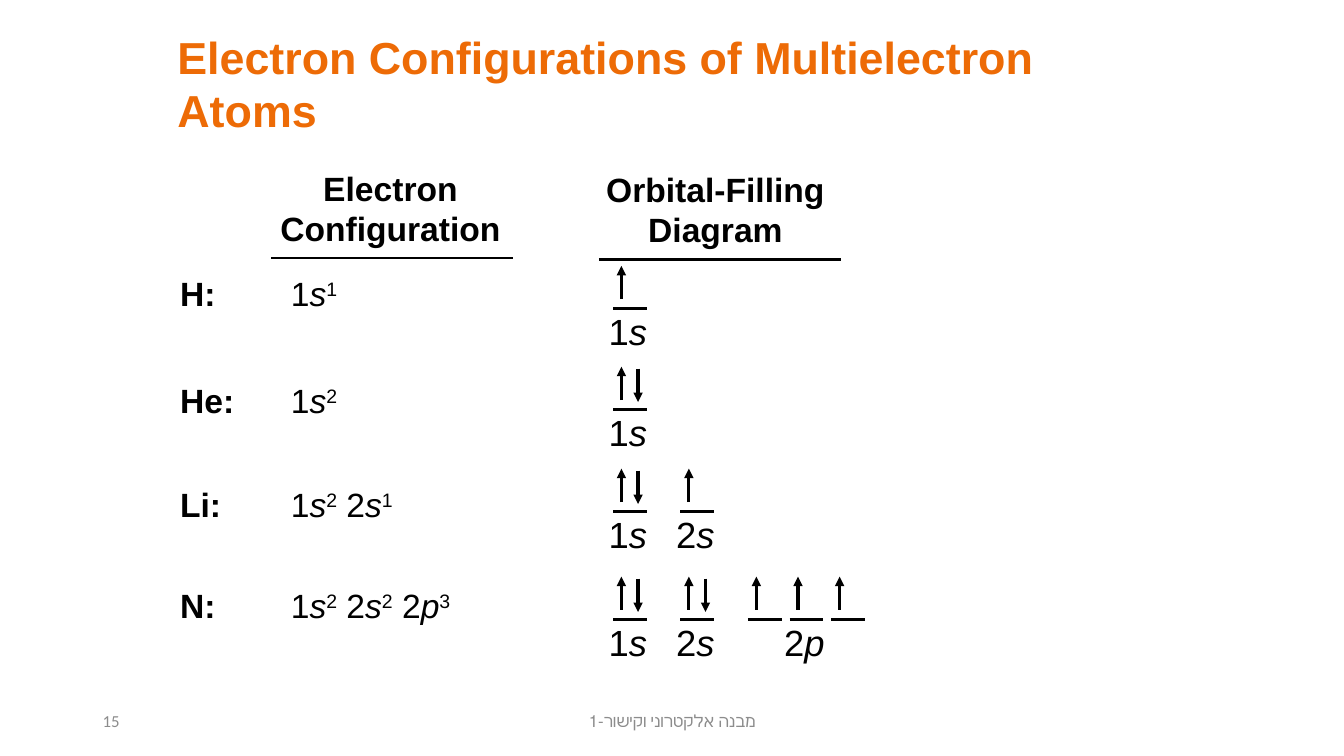
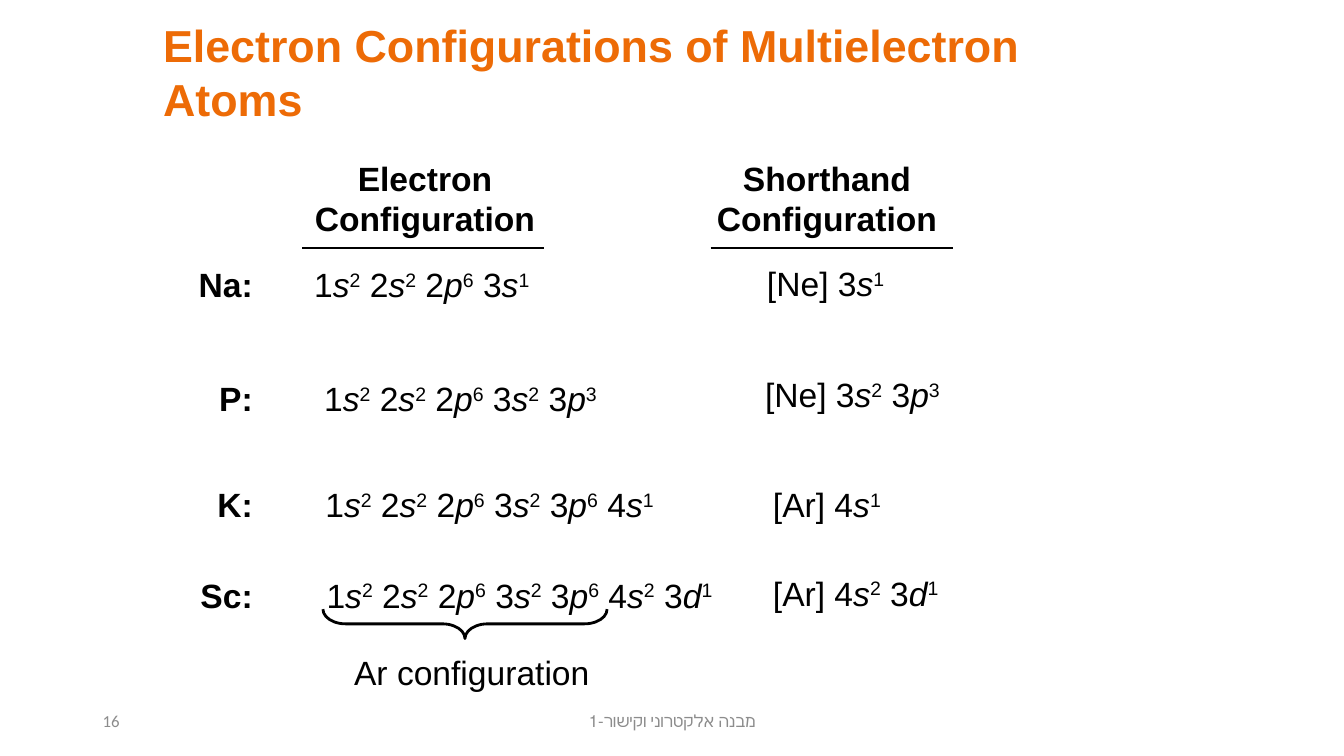
"""Builds two slides on the electron configurations of atoms."""
from itertools import groupby

from lxml import etree
from pptx import Presentation
from pptx.dml.color import RGBColor
from pptx.enum.shapes import MSO_CONNECTOR, MSO_SHAPE
from pptx.enum.text import MSO_ANCHOR, MSO_AUTO_SIZE, PP_ALIGN
from pptx.oxml.ns import qn
from pptx.util import Cm, Pt

LEFT, MID, RIGHT = PP_ALIGN.LEFT, PP_ALIGN.CENTER, PP_ALIGN.RIGHT
TOP, CENTRE, BASE = MSO_ANCHOR.TOP, MSO_ANCHOR.MIDDLE, MSO_ANCHOR.BOTTOM
FIXED = MSO_AUTO_SIZE.NONE
STRAIGHT, BRACE = MSO_CONNECTOR.STRAIGHT, MSO_SHAPE.LEFT_BRACE

ORANGE = RGBColor(0xED, 0x6B, 0x06)
BLACK = RGBColor(0, 0, 0)
GREY = RGBColor(0x8C, 0x8C, 0x8C)

TITLE = "Electron Configurations of Multielectron Atoms"
FOOTER = "מבנה אלקטרוני וקישור-1"
SHELLS = "spd"
ROW = 1.27
RULE = 6.1
BAR = 0.85
STEP = 1.7
NEXT = 1.05
FIRST = 15.45

LIGHT = [
    ("H:", 6.76, "1s1", 7.77, [("1s", [1])]),
    ("He:", 9.45, "1s2", 10.31, [("1s", [2])]),
    ("Li:", 12.07, "1s2 2s1", 12.88, [("1s", [2]), ("2s", [1])]),
    ("N:", 14.61, "1s2 2s2 2p3", 15.6,
     [("1s", [2]), ("2s", [2]), ("2p", [1, 1, 1])]),
]
HEAVY = [
    ("Na:", 6.53, 7.67, "1s2 2s2 2p6 3s1", 19.08, 6.5, "[Ne] 3s1"),
    ("P:", 9.39, 7.92, "1s2 2s2 2p6 3s2 3p3", 19.03, 9.3, "[Ne] 3s2 3p3"),
    ("K:", 12.07, 7.95, "1s2 2s2 2p6 3s2 3p6 4s1", 19.23, 12.07, "[Ar] 4s1"),
    ("Sc:", 14.35, 7.98, "1s2 2s2 2p6 3s2 3p6 4s2 3d1", 19.23, 14.3,
     "[Ar] 4s2 3d1"),
]


def style(frame, size, color=BLACK, bold=False, align=LEFT, face="Arial"):
    """Format every run of a text frame."""
    for para in frame.paragraphs:
        para.alignment = align
        for run in para.runs:
            font = run.font
            font.name, font.size, font.bold = face, Pt(size), bold
            font.color.rgb = color


def add_box(slide, left, top, width, height, anchor=TOP):
    """Add an empty text box and return its frame."""
    box = slide.shapes.add_textbox(Cm(left), Cm(top), Cm(width), Cm(height))
    frame = box.text_frame
    frame.word_wrap = True
    frame.vertical_anchor = anchor
    return frame


def add_text(slide, text, left, top, width, height=ROW, anchor=TOP,
             size=24, **look):
    """Add a text box in one style and return its frame."""
    frame = add_box(slide, left, top, width, height, anchor)
    frame.text = text
    style(frame, size, **look)
    return frame


def add_shells(slide, text, left, top, width=11, height=ROW, anchor=TOP,
               size=24, align=LEFT):
    """Add shell notation with italic letters and raised counts."""
    frame = add_box(slide, left, top, width, height, anchor)
    para = frame.paragraphs[0]
    kinds = ["shell" if char in SHELLS
             else "count" if last in SHELLS and char.isdigit()
             else "plain"
             for last, char in zip(" " + text, text)]
    for kind, group in groupby(zip(kinds, text), key=lambda pair: pair[0]):
        run = para.add_run()
        run.text = "".join(char for _, char in group)
        run.font.italic = kind == "shell"
        if kind == "count":
            run.font._element.set("baseline", "30000")
    style(frame, size, align=align)


def add_line(slide, x, y, end_x, end_y, width=2.25, arrow=False):
    """Draw a straight black line, with an arrowhead at its end if asked."""
    line = slide.shapes.add_connector(
        STRAIGHT, Cm(x), Cm(y), Cm(end_x), Cm(end_y))
    line.line.color.rgb = BLACK
    line.line.width = Pt(width)
    props = line._element.spPr
    if arrow:
        etree.SubElement(props.find(qn("a:ln")), qn("a:tailEnd"),
                         type="triangle")
    etree.SubElement(props, qn("a:effectLst"))


def add_slide(deck, number, left, top):
    """Add a slide with title, footer and number."""
    slide = deck.slides.add_slide(deck.slide_layouts[5])
    title = slide.shapes.title
    title.left, title.top = Cm(left), Cm(top)
    title.width, title.height = Cm(25.4), Cm(3)
    frame = title.text_frame
    frame.text = TITLE
    frame.word_wrap = True
    frame.auto_size = FIXED
    frame.vertical_anchor = TOP
    frame.margin_left = Cm(ROW)
    style(frame, 32, ORANGE, bold=True)
    small = {"size": 12, "color": GREY, "face": "Calibri"}
    foot = add_text(slide, FOOTER, 11.23, 17.65, 11.43, 1.02, CENTRE,
                    align=MID, **small)
    foot.paragraphs[0]._p.get_or_add_pPr().set("rtl", "1")
    add_text(slide, str(number), 2.34, 17.65, 7.62, 1.02, CENTRE, **small)
    return slide


def add_head(slide, text, mid, left, y):
    """Add a column heading above its rule."""
    add_text(slide, text, mid - 3.5, y - 2.41, 7, 2.31, CENTRE,
             bold=True, align=MID)
    add_line(slide, left, y, left + RULE, y, 2)


def add_cell(slide, x, y, count):
    """Draw one orbital bar with one or two spin arrows."""
    add_line(slide, x, y, x + BAR, y)
    add_line(slide, x + 0.21, y - 0.23, x + 0.21, y - 1.07, arrow=True)
    if count == 2:
        add_line(slide, x + 0.63, y - 1.02, x + 0.63, y - 0.18, arrow=True)


def add_level(slide, x, y, name, counts):
    """Draw the orbitals of one level and their shared label."""
    for i, count in enumerate(counts):
        add_cell(slide, x + i * NEXT, y, count)
    mid = x + (BAR + (len(counts) - 1) * NEXT) / 2 - 0.05
    add_shells(slide, name, mid - 1, y - 0.1, 2, 1.35, BASE, 26, MID)


def fill_light(slide):
    """Fill the slide of orbital diagrams."""
    add_head(slide, "Electron\nConfiguration", 9.84, 6.83, 6.5)
    add_head(slide, "Orbital-Filling\nDiagram", 18.03, 15.09, 6.53)
    for name, top, shells, y, levels in LIGHT:
        add_text(slide, name, 4.29, top, 2.5, bold=True)
        add_shells(slide, shells, 7.08, top)
        for i, (level, counts) in enumerate(levels):
            add_level(slide, FIRST + i * STEP, y, level, counts)


def fill_heavy(slide):
    """Fill the slide of shorthand forms."""
    add_head(slide, "Electron\nConfiguration", 10.71, 7.62, 6.25)
    add_head(slide, "Shorthand\nConfiguration", 20.84, 17.91, 6.25)
    for name, top, left, shells, x, y, short in HEAVY:
        add_text(slide, name, 4.12, top, 2.5, bold=True, align=RIGHT)
        add_shells(slide, shells, left, top)
        add_shells(slide, short, x, y, 7)
    brace = slide.shapes.add_shape(
        BRACE, Cm(11.35), Cm(12.14), Cm(0.74), Cm(7.16))
    brace.rotation = 270
    brace.adjustments[0] = 0.77
    brace.shadow.inherit = False
    brace.fill.background()
    brace.line.color.rgb = BLACK
    brace.line.width = Pt(2)
    add_text(slide, "Ar configuration", 8.39, 16.31, 7, anchor=CENTRE,
             align=MID)


def main():
    """Build and save the deck."""
    deck = Presentation()
    deck.slide_width, deck.slide_height = Cm(33.87), Cm(19.05)
    fill_light(add_slide(deck, 15, 3.2, 0.61))
    fill_heavy(add_slide(deck, 16, 2.84, 0.33))
    deck.save("out.pptx")


if __name__ == "__main__":
    main()
